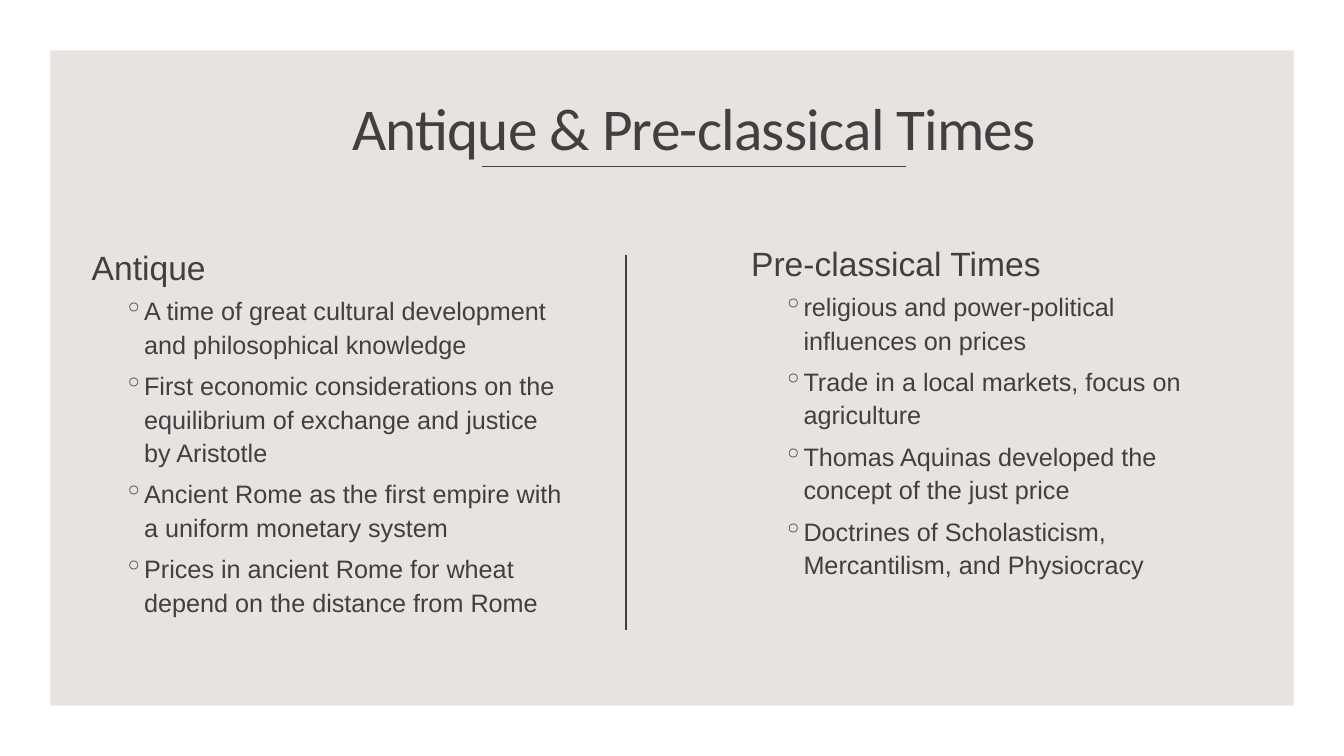
from lxml import etree
from pptx import Presentation
from pptx.dml.color import RGBColor
from pptx.enum.shapes import MSO_CONNECTOR, MSO_SHAPE
from pptx.enum.text import MSO_ANCHOR, PP_ALIGN
from pptx.oxml.ns import qn
from pptx.util import Inches, Pt

RECTANGLE = MSO_SHAPE.RECTANGLE
STRAIGHT = MSO_CONNECTOR.STRAIGHT
MIDDLE = MSO_ANCHOR.MIDDLE
CENTER = PP_ALIGN.CENTER

WHITE = RGBColor(0xFF, 0xFF, 0xFF)
PANEL = RGBColor(0xE8, 0xE2, 0xE1)
INK = RGBColor(0x40, 0x40, 0x40)

HEADING = {"line_spacing": 1.1, "space_before": Pt(12), "space_after": Pt(2)}
BULLET = {"line_spacing": 1.1, "space_before": Pt(2), "space_after": Pt(4), "level": 1}
TITLE = {"line_spacing": 0.9, "alignment": CENTER}

COLUMNS = [
    # left, height, heading, bullets
    (0.81, 4.95, "Antique", [
        "A time of great cultural development and philosophical knowledge",
        "First economic considerations on the equilibrium of exchange and justice by Aristotle",
        "Ancient Rome as the first empire with a uniform monetary system",
        "Prices in ancient Rome for wheat depend on the distance from Rome",
    ]),
    (7.35, 4.54, "Pre-classical Times", [
        "religious and power-political influences on prices",
        "Trade in a local markets, focus on agriculture",
        "Thomas Aquinas developed the concept of the just price",
        "Doctrines of Scholasticism, Mercantilism, and Physiocracy",
    ]),
]


def write(paragraph, text, font_name, size, paragraph_format):
    """Fill a paragraph with one run in the ink colour and return the run."""
    for name, value in paragraph_format.items():
        setattr(paragraph, name, value)
    run = paragraph.add_run()
    run.text = text
    for name, value in {"name": font_name, "size": Pt(size)}.items():
        setattr(run.font, name, value)
    run.font.color.rgb = INK
    return run


def indent(paragraph, left, first_line, bullet=None):
    properties = paragraph._p.get_or_add_pPr()
    properties.set("marL", str(Inches(left)))
    properties.set("indent", str(Inches(first_line)))
    if bullet:
        etree.SubElement(properties, qn("a:buChar")).set("char", bullet)


presentation = Presentation()
presentation.slide_width = Inches(13.33)
presentation.slide_height = Inches(7.5)
slide = presentation.slides.add_slide(presentation.slide_layouts[6])
slide.background.fill.solid()
slide.background.fill.fore_color.rgb = PANEL

# White frame with the tinted panel inside it
for margin, color in [(0, WHITE), (0.5, PANEL)]:
    shape = slide.shapes.add_shape(
        RECTANGLE, Inches(margin), Inches(margin),
        Inches(13.33 - 2 * margin), Inches(7.5 - 2 * margin))
    shape.shadow.inherit = False
    shape.fill.solid()
    shape.fill.fore_color.rgb = color
    shape.line.fill.background()

# Title
title_box = slide.shapes.add_textbox(Inches(2.3), Inches(0.95), Inches(9.17), Inches(0.7))
title_frame = title_box.text_frame
title_frame.word_wrap = True
title_frame.vertical_anchor = MIDDLE
title_run = write(title_frame.paragraphs[0], "Antique & Pre-classical Times", "Calibri", 42.3, TITLE)
title_run._r.get_or_add_rPr().set("spc", "-50")

# Title underline and column divider
for start_x, start_y, end_x, end_y in [(4.78, 1.65, 8.99, 1.65), (6.21, 2.53, 6.21, 6.25)]:
    line = slide.shapes.add_connector(
        STRAIGHT, Inches(start_x), Inches(start_y), Inches(end_x), Inches(end_y))
    line.line.color.rgb = INK
    line.line.width = Pt(1)
    etree.SubElement(line._element.spPr, qn("a:effectLst"))

# Text columns
for left, height, heading, bullets in COLUMNS:
    column = slide.shapes.add_textbox(Inches(left), Inches(1.79), Inches(4.8), Inches(height))
    frame = column.text_frame
    frame.word_wrap = True
    frame.vertical_anchor = MIDDLE
    frame.margin_left = frame.margin_right = 0
    write(frame.paragraphs[0], heading, "Arial", 24, HEADING)
    indent(frame.paragraphs[0], 0.1, 0)
    for text in bullets:
        paragraph = frame.add_paragraph()
        write(paragraph, text, "Arial", 18, BULLET)
        indent(paragraph, 0.62, -0.2, "◦")

presentation.save("out.pptx")
